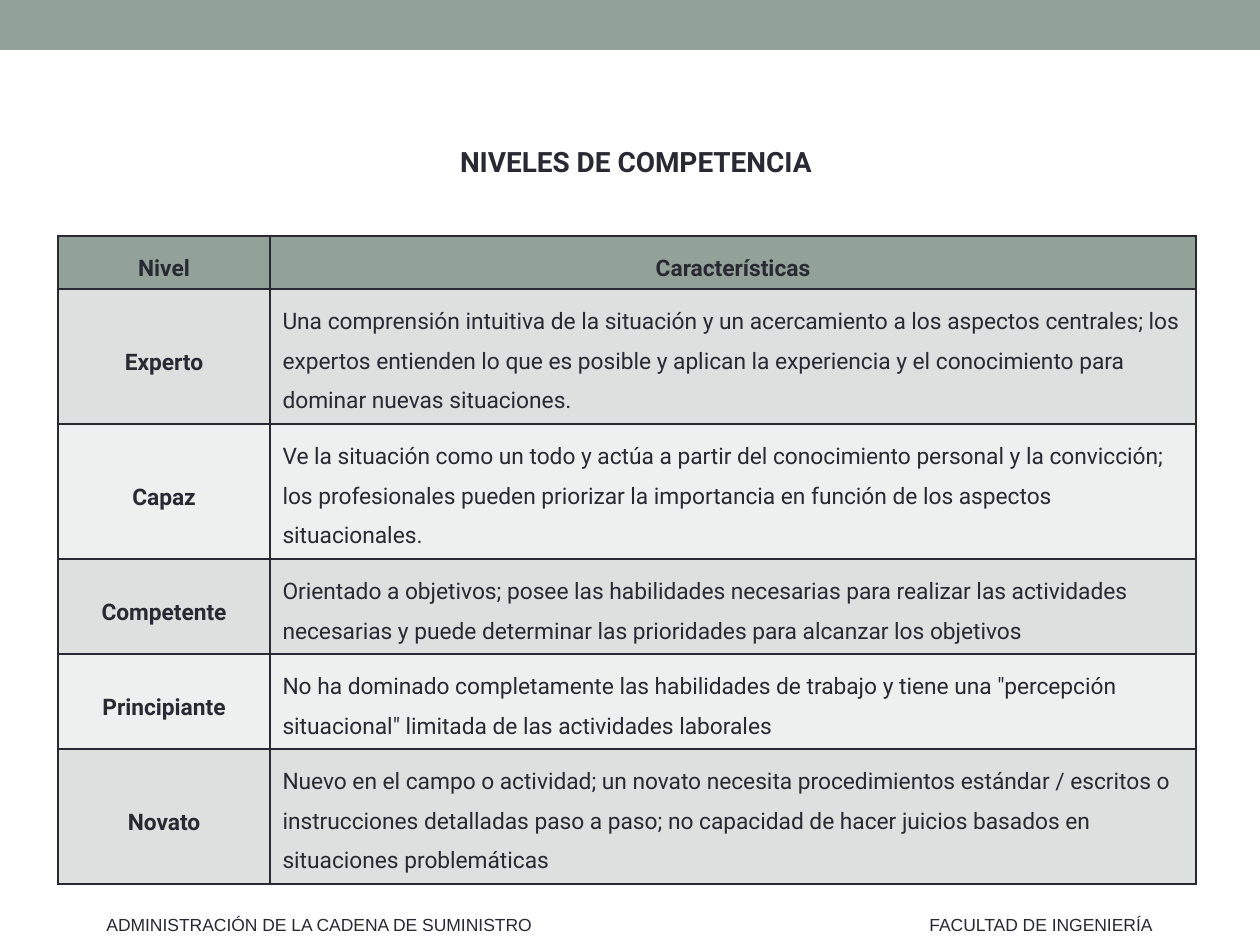
from dataclasses import dataclass

from lxml.etree import SubElement
from pptx import Presentation
from pptx.dml.color import RGBColor
from pptx.enum.shapes import MSO_SHAPE
from pptx.enum.text import MSO_ANCHOR, MSO_AUTO_SIZE, PP_ALIGN
from pptx.oxml.ns import qn
from pptx.util import Emu, Pt

PX_PER_INCH = 126
COLORS = {
    "sage": "93A299",
    "ink": "292934",
    "dark_band": "DCE0DE",
    "light_band": "EEF0EF",
}


@dataclass(frozen=True)
class Level:
    name: str
    traits: str
    height: int


@dataclass(frozen=True)
class FooterNote:
    text: str
    left: int
    width: int


LEVELS = [
    Level("Experto", "Una comprensión intuitiva de la situación y un acercamiento a los "
          "aspectos centrales; los expertos entienden lo que es posible y aplican la "
          "experiencia y el conocimiento para dominar nuevas situaciones.", 135),
    Level("Capaz", "Ve la situación como un todo y actúa a partir del conocimiento personal "
          "y la convicción; los profesionales pueden priorizar la importancia en función "
          "de los aspectos situacionales.", 135),
    Level("Competente", "Orientado a objetivos; posee las habilidades necesarias para "
          "realizar las actividades necesarias y puede determinar las prioridades para "
          "alcanzar los objetivos", 95),
    Level("Principiante", "No ha dominado completamente las habilidades de trabajo y tiene "
          "una \"percepción situacional\" limitada de las actividades laborales", 95),
    Level("Novato", "Nuevo en el campo o actividad; un novato necesita procedimientos "
          "estándar / escritos o instrucciones detalladas paso a paso; no capacidad de "
          "hacer juicios basados en situaciones problemáticas", 135),
]
FOOTER_NOTES = [
    FooterNote("ADMINISTRACIÓN DE LA CADENA DE SUMINISTRO", 94, 457),
    FooterNote("FACULTAD DE INGENIERÍA", 917, 255),
]
HEADER_HEIGHT = 53
COLUMN_WIDTHS = [212, 926]


def px(length: int) -> Emu:
    return Emu(round(length * 914400 / PX_PER_INCH))


def box(left: int, top: int, width: int, height: int) -> tuple:
    return px(left), px(top), px(width), px(height)


def color(name: str) -> RGBColor:
    return RGBColor.from_string(COLORS[name])


def write(frame, text: str, size: int, font: str = "Roboto", bold: bool = False,
          align=PP_ALIGN.LEFT, spacing: float = 1.0):
    paragraph = frame.paragraphs[0]
    paragraph.alignment = align
    paragraph.line_spacing = spacing
    run = paragraph.add_run()
    run.text = text
    run.font.size = Pt(size)
    run.font.name = font
    run.font.bold = bold
    run.font.color.rgb = color("ink")
    return paragraph


def add_borders(cell) -> None:
    properties = cell._tc.get_or_add_tcPr()
    for side in ("a:lnL", "a:lnR", "a:lnT", "a:lnB"):
        line = SubElement(properties, qn(side), w=str(Pt(1)))
        fill = SubElement(line, qn("a:solidFill"))
        SubElement(fill, qn("a:srgbClr"), val=COLORS["ink"])


def fill_cell(cell, text: str, band: str, heading: bool, anchor=MSO_ANCHOR.TOP) -> None:
    add_borders(cell)
    cell.fill.solid()
    cell.fill.fore_color.rgb = color(band)
    cell.vertical_anchor = anchor
    align = PP_ALIGN.CENTER if heading else PP_ALIGN.LEFT
    write(cell.text_frame, text, 13, bold=heading, align=align, spacing=1.5)


def add_levels_table(slide, left: int, top: int) -> None:
    heights = [HEADER_HEIGHT] + [level.height for level in LEVELS]
    table = slide.shapes.add_table(
        len(heights), len(COLUMN_WIDTHS),
        *box(left, top, sum(COLUMN_WIDTHS), sum(heights))).table
    for column, width in zip(table.columns, COLUMN_WIDTHS):
        column.width = px(width)
    for row, height in zip(table.rows, heights):
        row.height = px(height)

    for index, heading in enumerate(["Nivel", "Características"]):
        fill_cell(table.cell(0, index), heading, "sage", heading=True)
    for index, level in enumerate(LEVELS, start=1):
        band = "dark_band" if index % 2 else "light_band"
        fill_cell(table.cell(index, 0), level.name, band, True, MSO_ANCHOR.MIDDLE)
        fill_cell(table.cell(index, 1), level.traits, band, heading=False)


def add_footer_note(slide, note: FooterNote) -> None:
    frame = slide.shapes.add_textbox(*box(note.left, 908, note.width, 34)).text_frame
    frame.word_wrap = False
    frame.auto_size = MSO_AUTO_SIZE.SHAPE_TO_FIT_TEXT
    write(frame, note.text, 10, font="Arial")


def main() -> None:
    deck = Presentation()
    deck.slide_width, deck.slide_height = px(1260), px(945)
    slide = deck.slides.add_slide(deck.slide_layouts[5])

    # Top band
    band = slide.shapes.add_shape(MSO_SHAPE.RECTANGLE, *box(0, 0, 1260, 50))
    band.shadow.inherit = False
    band.fill.solid()
    band.fill.fore_color.rgb = color("sage")
    band.line.fill.background()

    # Title
    title = slide.shapes.title
    title.left, title.top, title.width, title.height = box(105, 121, 1062, 70)
    title.text_frame.vertical_anchor = MSO_ANCHOR.TOP
    heading = write(title.text_frame, "NIVELES DE COMPETENCIA", 16, bold=True,
                    align=PP_ALIGN.CENTER, spacing=1.5)
    heading.space_after = Pt(12)

    # Levels and footer
    add_levels_table(slide, 58, 236)
    for note in FOOTER_NOTES:
        add_footer_note(slide, note)

    deck.save("out.pptx")


if __name__ == "__main__":
    main()
